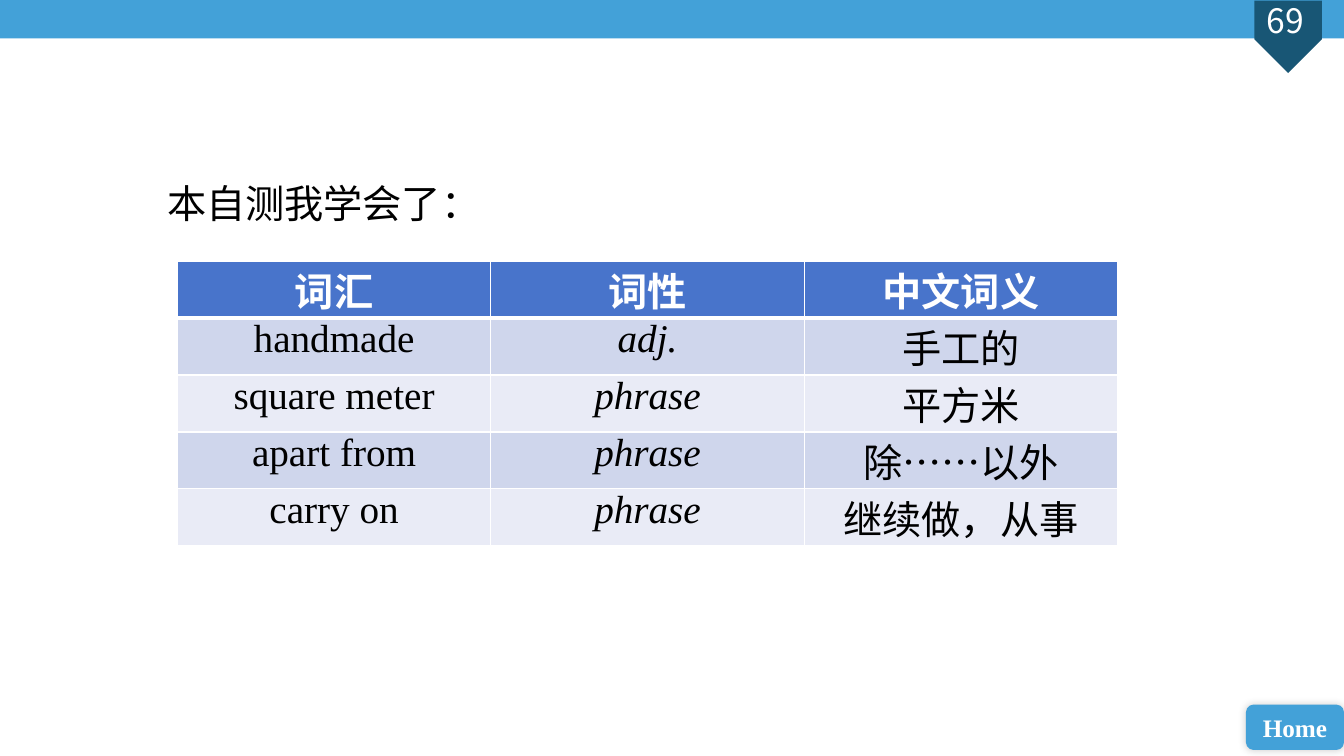
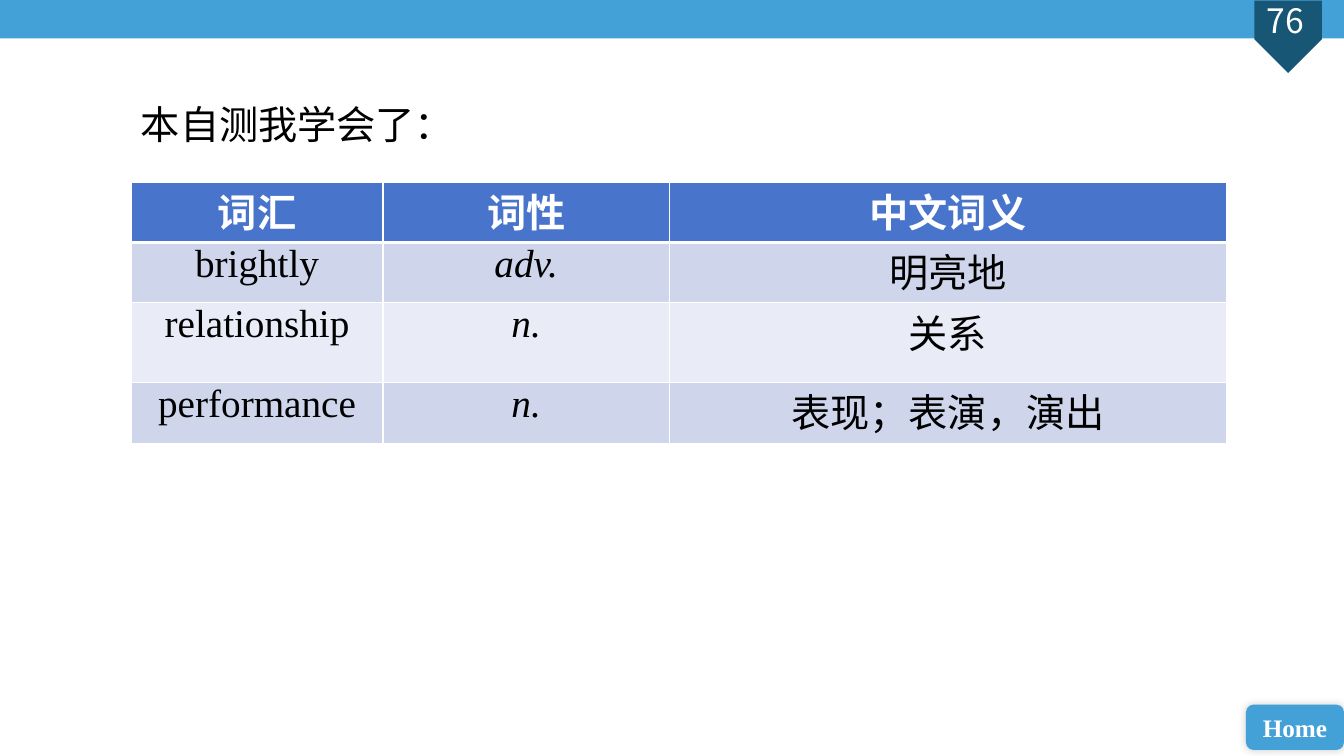
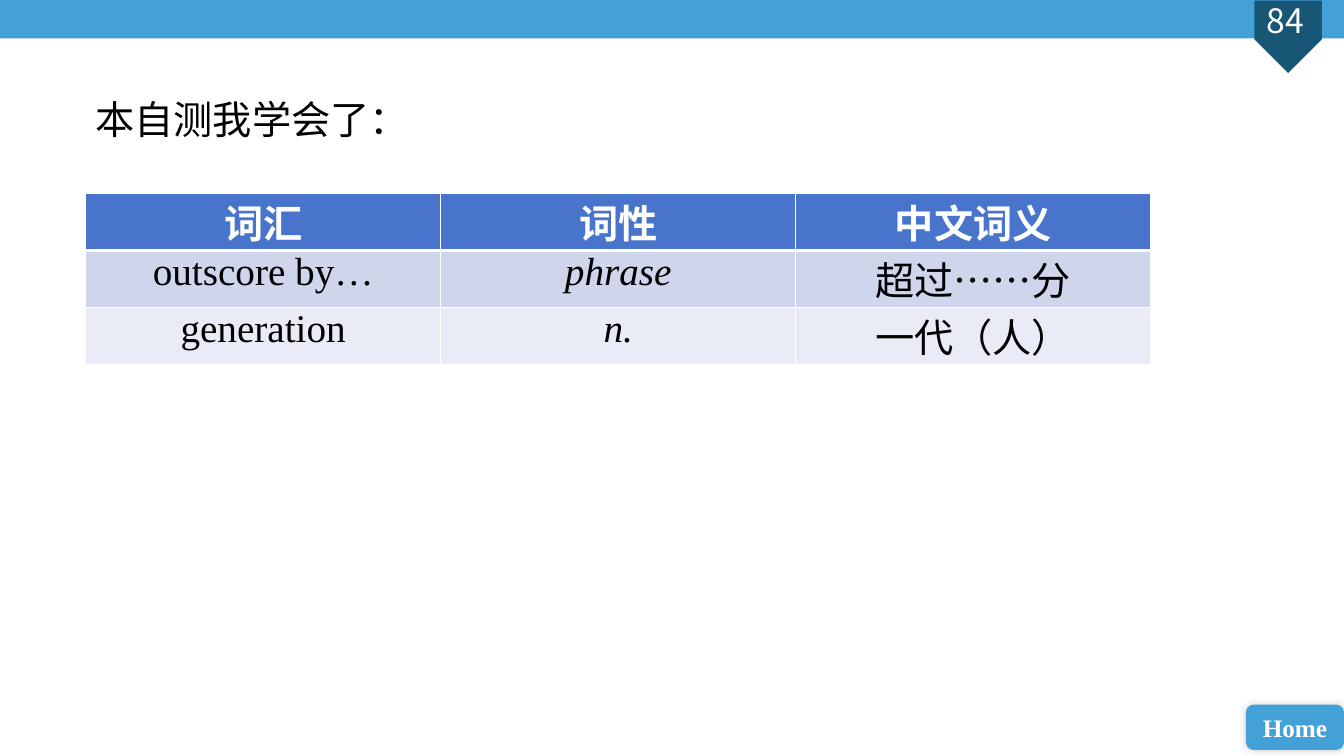
"""Build three vocabulary review slides with a shared frame."""
import dataclasses

import pptx
import pptx.dml.color
import pptx.enum.shapes
import pptx.enum.text
import pptx.oxml
import pptx.oxml.ns
import pptx.util

Pt = pptx.util.Pt
Shape = pptx.enum.shapes.MSO_SHAPE
Align = pptx.enum.text.PP_ALIGN
Anchor = pptx.enum.text.MSO_ANCHOR
qn = pptx.oxml.ns.qn
NS = pptx.oxml.ns.nsdecls("a")


@dataclasses.dataclass(frozen=True)
class Theme:
    """Colours, fonts and type sizes."""
    band: str = "43A1D8"
    badge: str = "185675"
    head: str = "4874CB"
    rows: tuple = ("CFD6EC", "E9EBF6")
    white: str = "FFFFFF"
    black: str = "000000"
    serif: str = "Times New Roman"
    sans: str = "Calibri"
    asian: str = "Noto Sans CJK SC"
    big: int = 28
    mid: int = 24
    small: int = 18


THEME = Theme()
TITLE = "本自测我学会了："
HEAD = ("词汇", "词性", "中文词义")
PAGES = (
    dict(page="69", title=(112.3, 128.2), spot=(126.7, 186.5),
         cols=(223.9,) * 3, rows=(40.7,) * 5,
         words=(("handmade", "adj.", "手工的"),
                ("square meter", "phrase", "平方米"),
                ("apart from", "phrase", "除……以外"),
                ("carry on", "phrase", "继续做，从事"))),
    dict(page="76", title=(93.6, 72), spot=(93.6, 130.3),
         cols=(180, 204.5, 398), rows=(43, 43, 57, 43.5),
         words=(("brightly", "adv.", "明亮地"),
                ("relationship", "n.", "关系"),
                ("performance", "n.", "表现；表演，演出"))),
    dict(page="84", title=(61.2, 68.4), spot=(61.2, 138.3),
         cols=(253.6,) * 3, rows=(40.7,) * 3,
         words=(("outscore by…", "phrase", "超过……分"),
                ("generation", "n.", "一代（人）"))),
)


def paint(fill, color):
    """Give a fill one solid colour."""
    fill.solid()
    fill.fore_color.rgb = pptx.dml.color.RGBColor.from_string(color)


def write(frame, text, color, align=Align.LEFT, **form):
    """Write one run of text with the given font values."""
    para = frame.paragraphs[0]
    para.alignment = align
    run = para.add_run()
    run.text = text
    for key, value in form.items():
        setattr(run.font, key, value)
    paint(run.font.fill, color)
    east = pptx.oxml.parse_xml(f'<a:ea {NS} typeface="{THEME.asian}"/>')
    run.font._element.find(qn("a:latin")).addnext(east)


def inset(frame, side=0):
    """Set side margins and drop those above and below."""
    form = dict(margin_left=Pt(side), margin_right=Pt(side),
                margin_top=0, margin_bottom=0)
    for key, value in form.items():
        setattr(frame, key, value)


def block(slide, kind, box, color):
    """Add a plain filled shape."""
    shape = slide.shapes.add_shape(kind, *map(Pt, box))
    shape.shadow.inherit = False
    paint(shape.fill, color)
    shape.line.fill.background()
    return shape


def label(slide, box, text, color, side=0, **form):
    """Add a text box."""
    frame = slide.shapes.add_textbox(*map(Pt, box)).text_frame
    frame.word_wrap = True
    inset(frame, side)
    write(frame, text, color, **form)


def glow(shape):
    """Add a soft dark shadow around a shape."""
    effect = shape._element.spPr.find(qn("a:effectLst"))
    effect.append(pptx.oxml.parse_xml(
        f'<a:outerShdw {NS} blurRad="{Pt(6)}" dist="0" dir="18900000" '
        f'algn="ctr" rotWithShape="0"><a:srgbClr val="{THEME.black}">'
        '<a:alpha val="20000"/></a:srgbClr></a:outerShdw>'))


def edge(cell, **sides):
    """Draw white cell borders, sides given as L, R, T, B widths."""
    props = cell._tc.get_or_add_tcPr()
    for spot, (side, width) in enumerate(sides.items()):
        props.insert(spot, pptx.oxml.parse_xml(
            f'<a:ln{side} {NS} w="{Pt(width)}"><a:solidFill>'
            f'<a:srgbClr val="{THEME.white}"/></a:solidFill></a:ln{side}>'))


def grid(slide, spot, cols, rows, words):
    """Add the word table."""
    lines = (HEAD, *words)
    size = (sum(cols), sum(rows))
    table = slide.shapes.add_table(
        len(rows), len(cols), *map(Pt, (*spot, *size))).table
    for col, width in zip(table.columns, cols):
        col.width = Pt(width)
    for r, (line, height) in enumerate(zip(lines, rows)):
        table.rows[r].height = Pt(height)
        top = r == 0
        for c, text in enumerate(line):
            cell = table.cell(r, c)
            inset(cell)
            paint(cell.fill, THEME.head if top else THEME.rows[(r - 1) % 2])
            edge(cell, L=1, R=1, T=3 if r == 1 else 1, B=3 if top else 1)
            write(cell.text_frame, text, THEME.white if top else THEME.black,
                  Align.CENTER, name=THEME.serif, size=Pt(THEME.big),
                  bold=top, italic=c == 1 and not top)


def frame(slide, page):
    """Add the band, page badge and home button."""
    block(slide, Shape.RECTANGLE, (0, 0, 960, 27.4), THEME.band)
    badge = block(slide, Shape.PENTAGON, (894.2, 2.2, 51.8, 48.2), THEME.badge)
    badge.rotation = 90
    label(slide, (883, 0, 70, 36), page, THEME.white, align=Align.CENTER,
          name=THEME.asian, size=Pt(THEME.mid))
    home = block(slide, Shape.ROUNDED_RECTANGLE, (890, 503.3, 70, 32.4),
                 THEME.band)
    glow(home)
    inset(home.text_frame)
    home.text_frame.vertical_anchor = Anchor.MIDDLE
    write(home.text_frame, "Home", THEME.white, Align.CENTER,
          name=THEME.serif, size=Pt(THEME.small), bold=True)


def main():
    """Build and save the deck."""
    deck = pptx.Presentation()
    deck.slide_width, deck.slide_height = Pt(960), Pt(540)
    for data in PAGES:
        slide = deck.slides.add_slide(deck.slide_layouts[6])
        frame(slide, data["page"])
        grid(slide, data["spot"], data["cols"], data["rows"], data["words"])
        label(slide, (*data["title"], 278.6, 41), TITLE, THEME.black, 7.2,
              name=THEME.sans, size=Pt(THEME.big))
    deck.save("out.pptx")


if __name__ == "__main__":
    main()
